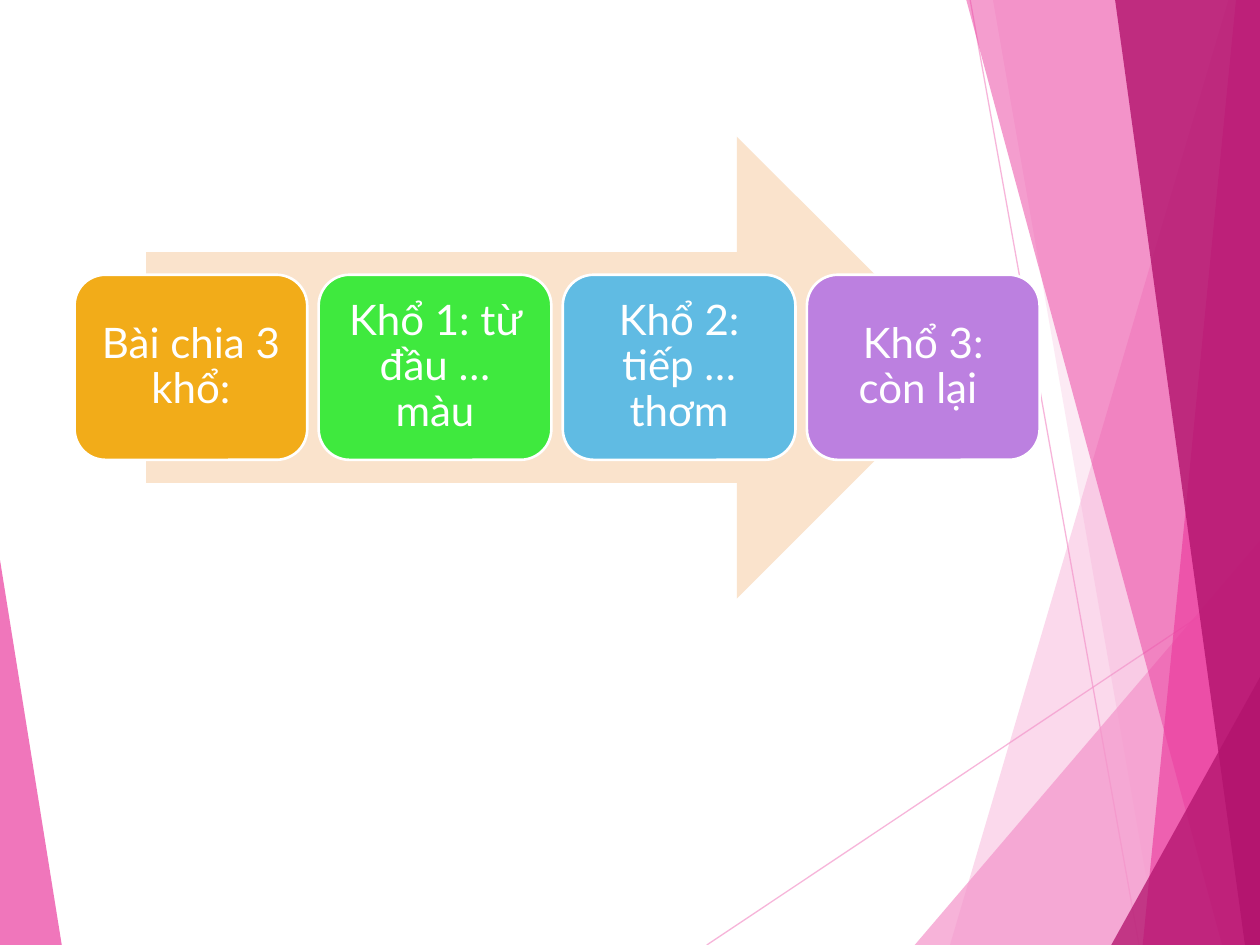
from lxml.etree import SubElement
from pptx import Presentation
from pptx.dml.color import RGBColor
from pptx.enum.shapes import MSO_CONNECTOR, MSO_SHAPE
from pptx.enum.text import MSO_ANCHOR, PP_ALIGN
from pptx.oxml.ns import qn
from pptx.util import Pt

COLORS = {
    "pale_pink": "F496CB", "pink": "EB3D9F", "magenta": "B2136D",
    "arrow": "FAE3CC", "white": "FFFFFF", "orange": "F2AC19",
    "green": "3FE93E", "blue": "60BBE3", "purple": "BC80E0",
}
RAYS = [((403.9, 540), (720, 329)), ((554.4, 0), (650.9, 540))]
FACETS = [
    ("pale_pink", 36, [(702, 0), (542.9, 540), (720, 540), (720, 0)]),
    ("pale_pink", 20, [(567.4, 0), (661.7, 540), (720, 540), (720, 0)]),
    ("pale_pink", 72, [(522.7, 540), (720, 308.9), (720, 540)]),
    ("pink", 50, [(552.2, 0), (698.4, 540), (720, 540), (720, 0)]),
    ("pink", 66, [(706.3, 0), (653, 540), (720, 540), (720, 0)]),
    ("magenta", 80, [(637.2, 0), (711.4, 540), (720, 540), (720, 0)]),
    ("magenta", 76, [(635, 540), (720, 387), (720, 540)]),
    ("pink", 70, [(0, 320), (35.3, 540), (0, 540)]),
]
STEPS = [
    ("Bài chia 3 khổ:", "orange"),
    ("Khổ 1: từ đầu … màu", "green"),
    ("Khổ 2: tiếp …thơm", "blue"),
    ("Khổ 3: còn lại ", "purple"),
]
STEP_LEFT, STEP_TOP, STEP_W, STEP_H, STEP_PITCH = 42.6, 157, 133, 105.8, 139.5


def paint(fill, color, alpha=100):
    """Fill with a named colour at an opacity in percent."""
    fill.solid()
    fill.fore_color.rgb = RGBColor.from_string(COLORS[color])
    if alpha < 100:
        clr = fill._xPr.find(qn("a:solidFill"))[0]
        SubElement(clr, qn("a:alpha")).set("val", str(alpha * 1000))


def add_ray(slide, start, end):
    """Draw one thin translucent background line."""
    x1, y1, x2, y2 = (Pt(v) for v in start + end)
    cxn = slide.shapes.add_connector(MSO_CONNECTOR.STRAIGHT, x1, y1, x2, y2)
    cxn.line.width = Pt(0.75)
    paint(cxn.line.fill, "pale_pink", 70)
    SubElement(cxn._element.spPr, qn("a:effectLst"))


def add_facet(slide, color, alpha, points):
    """Draw one translucent background polygon."""
    pts = [(Pt(x), Pt(y)) for x, y in points]
    builder = slide.shapes.build_freeform(*pts[0])
    builder.add_line_segments(pts[1:], close=True)
    sp = builder.convert_to_shape()
    sp.shadow.inherit = False
    sp.line.fill.background()
    paint(sp.fill, color, alpha)


def add_block(slide, kind, left, top, width, height, color, line=None):
    """Add a filled preset shape with an optional outline."""
    sp = slide.shapes.add_shape(kind, Pt(left), Pt(top), Pt(width), Pt(height))
    sp.shadow.inherit = False
    paint(sp.fill, color)
    if line:
        paint(sp.line.fill, line)
        sp.line.width = Pt(1.5)
    else:
        sp.line.fill.background()
    return sp


def set_text(sp, text, *, size=24, font="Lato", color="white", inset=7.2):
    """Write centred, wrapped text into a shape."""
    tf = sp.text_frame
    tf.word_wrap = True
    tf.vertical_anchor = MSO_ANCHOR.MIDDLE
    tf.margin_left = tf.margin_right = tf.margin_top = tf.margin_bottom = Pt(inset)
    p = tf.paragraphs[0]
    p.alignment = PP_ALIGN.CENTER
    p.line_spacing = 0.9
    r = p.add_run()
    r.text = text
    r.font.size = Pt(size)
    r.font.name = font
    r.font.color.rgb = RGBColor.from_string(COLORS[color])


def main():
    """Build the slide and save it."""
    prs = Presentation()
    prs.slide_width, prs.slide_height = Pt(720), Pt(540)
    slide = prs.slides.add_slide(prs.slide_layouts[6])
    for start, end in RAYS:
        add_ray(slide, start, end)
    for color, alpha, points in FACETS:
        add_facet(slide, color, alpha, points)
    add_block(slide, MSO_SHAPE.RIGHT_ARROW, 83.5, 78, 469.5, 264, "arrow")
    for i, (text, color) in enumerate(STEPS):
        sp = add_block(slide, MSO_SHAPE.ROUNDED_RECTANGLE,
                       STEP_LEFT + i * STEP_PITCH, STEP_TOP, STEP_W, STEP_H,
                       color, line="white")
        set_text(sp, text)
    prs.save("out.pptx")


if __name__ == "__main__":
    main()
